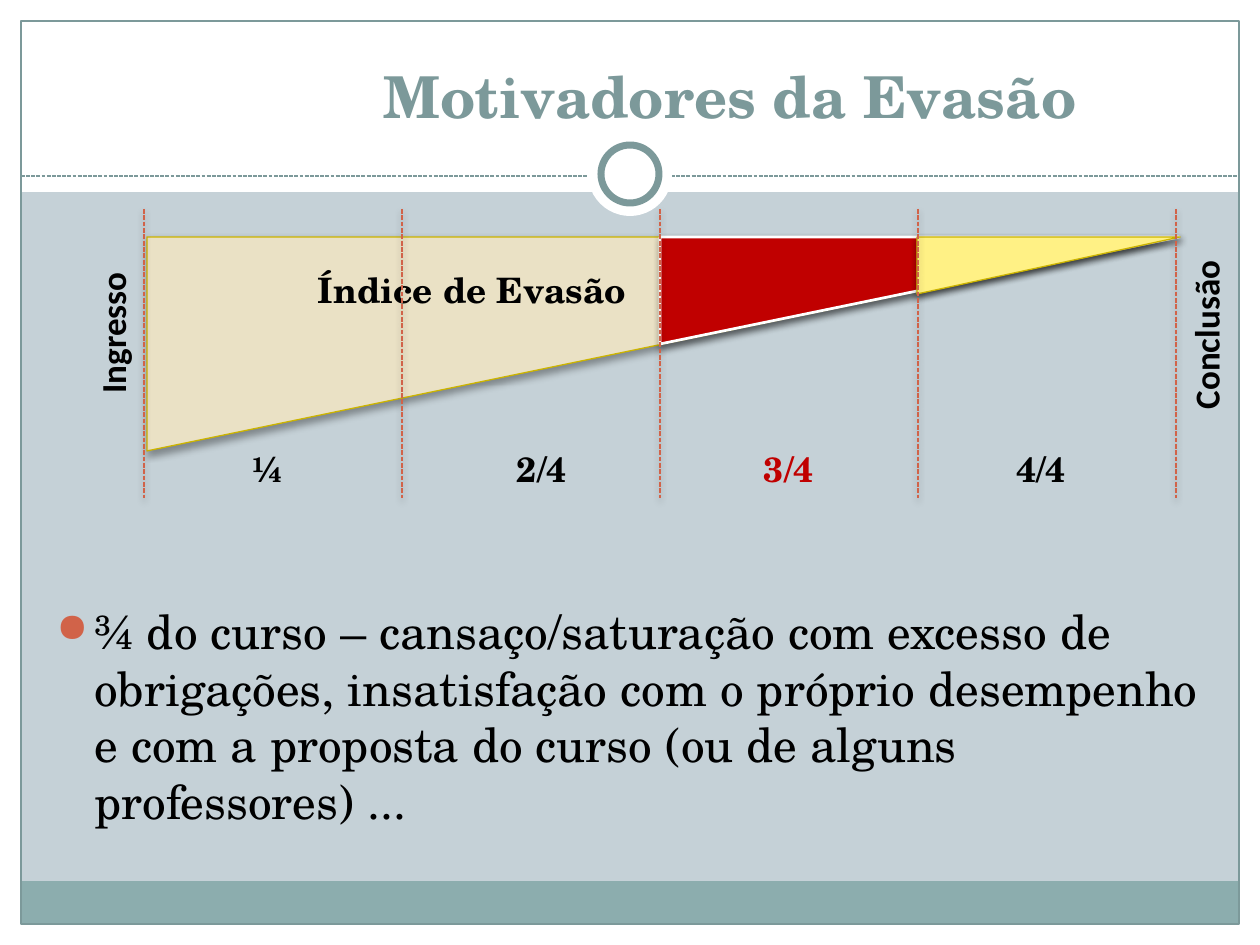
import pptx
import pptx.util
import pptx.oxml
import pptx.oxml.ns
import pptx.dml.color
import pptx.enum.dml
import pptx.enum.shapes
import pptx.enum.text
from lxml import etree

Pt = pptx.util.Pt
KIND = pptx.enum.shapes.MSO_SHAPE
ALIGN = pptx.enum.text.PP_ALIGN
ANCHOR = pptx.enum.text.MSO_ANCHOR
PX = 914400 / 126
SERIF, SANS = "TeX Gyre Schola", "Calibri"
HUE = {
    "back": "C5D1D7", "white": "FFFFFF", "band": "8CADAE", "teal": "7C999A",
    "sand": "EAE1C5", "gold": "CCB400", "red": "C00000", "yellow": "FFF185",
    "rust": "D16349", "black": "000000",
}


def emu(*nums):
    return [round(n * PX) for n in nums]


def color(name):
    return pptx.dml.color.RGBColor.from_string(HUE[name])


def effect(shape, shade):
    """Give a shape an effect list, with a soft shadow or empty."""
    props = shape._element.spPr
    for old in props.findall(pptx.oxml.ns.qn("a:effectLst")):
        props.remove(old)
    inner = (
        '<a:outerShdw blurRad="50800" dist="25400" dir="5400000" '
        'rotWithShape="0"><a:srgbClr val="000000"><a:alpha val="35000"/>'
        "</a:srgbClr></a:outerShdw>"
    ) if shade else ""
    props.append(pptx.oxml.parse_xml(
        f'<a:effectLst {pptx.oxml.ns.nsdecls("a")}>{inner}</a:effectLst>'))


def stroke(line, hue, width, dash=False):
    line.color.rgb = color(hue)
    line.width = Pt(width)
    if dash:
        line.dash_style = pptx.enum.dml.MSO_LINE.SQUARE_DOT


def block(slide, kind, box, fill=None, edge=None, shade=False):
    shape = slide.shapes.add_shape(kind, *emu(*box))
    effect(shape, shade)
    if fill:
        shape.fill.solid()
        shape.fill.fore_color.rgb = color(fill)
    else:
        shape.fill.background()
    if edge:
        stroke(shape.line, *edge)
    else:
        shape.line.fill.background()
    return shape


def rule(slide, ends, hue, width, shade=False):
    link = slide.shapes.add_connector(
        pptx.enum.shapes.MSO_CONNECTOR.STRAIGHT, *emu(*ends))
    stroke(link.line, hue, width, dash=True)
    effect(link, shade)


def write(shape, text, size, hue="black", font=SERIF, bold=True,
          align=ALIGN.CENTER, wrap=True, anchor=ANCHOR.TOP):
    frame = shape.text_frame
    frame.word_wrap = wrap
    frame.vertical_anchor = anchor
    para = frame.paragraphs[0]
    para.alignment = align
    run = para.add_run()
    run.text = text
    style = {"name": font, "size": Pt(size), "bold": bold}
    for key, value in style.items():
        setattr(run.font, key, value)
    run.font.color.rgb = color(hue)
    return para


def label(slide, box, text, turn=0, **style):
    shape = slide.shapes.add_textbox(*emu(*box))
    shape.rotation = turn
    write(shape, text, 20, **style)


def backdrop(slide, box):
    left, top, wide, high = box
    edge, head = 21, 192
    # White margins and header
    for part in (
        (left, top + high - edge, wide, edge),
        (left, top, wide, head),
        (left, top, edge, high),
        (left + wide - edge, top, edge, high),
    ):
        block(slide, KIND.RECTANGLE, part, "white")
    # Footer band, frame and header rule
    inner = wide - 2 * edge
    block(slide, KIND.RECTANGLE,
          (left + edge, top + high - edge - 43, inner, 43), "band")
    block(slide, KIND.RECTANGLE,
          (left + edge, top + edge, inner, high - 2 * edge),
          edge=("teal", 0.75))
    mid, level = left + wide // 2, top + 176
    rule(slide, (left + edge, level, left + wide - edge, level), "teal", 0.75)
    # Ring on the header rule
    for size, line in ((84, None), (58, ("teal", 4))):
        block(slide, KIND.OVAL,
              (mid - size // 2, top + 174 - size // 2, size, size),
              "white", line)


def heading(slide, box):
    title = slide.shapes.title
    for key, value in zip(("left", "top", "width", "height"), emu(*box)):
        setattr(title, key, value)
    write(title, "Motivadores da Evasão", 33, "teal", anchor=ANCHOR.BOTTOM)
    # Bring the title in front of the backdrop
    slide.shapes._spTree.append(title._element)


def funnel(slide, box):
    left, top, wide, high = box
    step = wide // 4
    # Shrinking wedges, each one over the tail of the last
    for dx, width, tall, fill, edge in (
        (3, 1033, 214, "sand", ("gold", 0.75)),
        (516, 519, 107, "red", ("white", 1.57)),
        (773, 263, 57, "yellow", ("gold", 0.75)),
    ):
        wedge = block(slide, KIND.RIGHT_TRIANGLE,
                      (left + dx, top + 28, width, tall), fill, edge, True)
        wedge._element.spPr.find(pptx.oxml.ns.qn("a:xfrm")).set("flipV", "1")
    # Names of the ends and of the quarters
    for dx, dy, width, text in (
        (-126, 96, 190, "Ingresso"), (975, 98, 175, "Conclusão"),
    ):
        label(slide, (left + dx, top + dy, width, 56), text, 270,
              font=SANS, wrap=False)
    for dx, text, hue in (
        (20, "¼ ", "black"), (294, "2/4 ", "black"),
        (541, "3/4 ", "red"), (788, "4/4", "black"),
    ):
        label(slide, (left + dx, top + 232, 218, 56), text, hue=hue)
    label(slide, (left + 39, top + 53, 578, 70), "Índice de Evasão")
    # Dashed marks between quarters
    for i in range(5):
        x = left + i * step
        rule(slide, (x, top, x, top + high), "rust", 0.9, True)


def bullet(slide, box):
    shape = slide.shapes.add_textbox(*emu(*box))
    para = write(
        shape,
        "¾ do curso – cansaço/saturação com excesso de obrigações, "
        "insatisfação com o próprio desempenho e com a proposta do curso "
        "(ou de alguns professores) ...",
        27, bold=False, align=ALIGN.LEFT)
    para.space_before = Pt(5)
    props = para._p.get_or_add_pPr()
    indent, = emu(38)
    props.set("marL", str(indent))
    props.set("indent", str(-indent))
    tint = etree.SubElement(props, pptx.oxml.ns.qn("a:buClr"))
    for parent, tag, key, value in (
        (tint, "srgbClr", "val", HUE["rust"]),
        (props, "buSzPct", "val", "85000"),
        (props, "buChar", "char", "●"),
    ):
        etree.SubElement(parent, pptx.oxml.ns.qn("a:" + tag)).set(key, value)


def main():
    deck = pptx.Presentation()
    deck.slide_width, deck.slide_height = emu(1260, 945)
    slide = deck.slides.add_slide(deck.slide_layouts.get_by_name("Title Only"))
    slide.background.fill.solid()
    slide.background.fill.fore_color.rgb = color("back")
    backdrop(slide, (0, 0, 1260, 945))
    heading(slide, (243, 32, 974, 104))
    funnel(slide, (144, 209, 1032, 289))
    bullet(slide, (44, 596, 1172, 312))
    deck.save("out.pptx")


if __name__ == "__main__":
    main()
